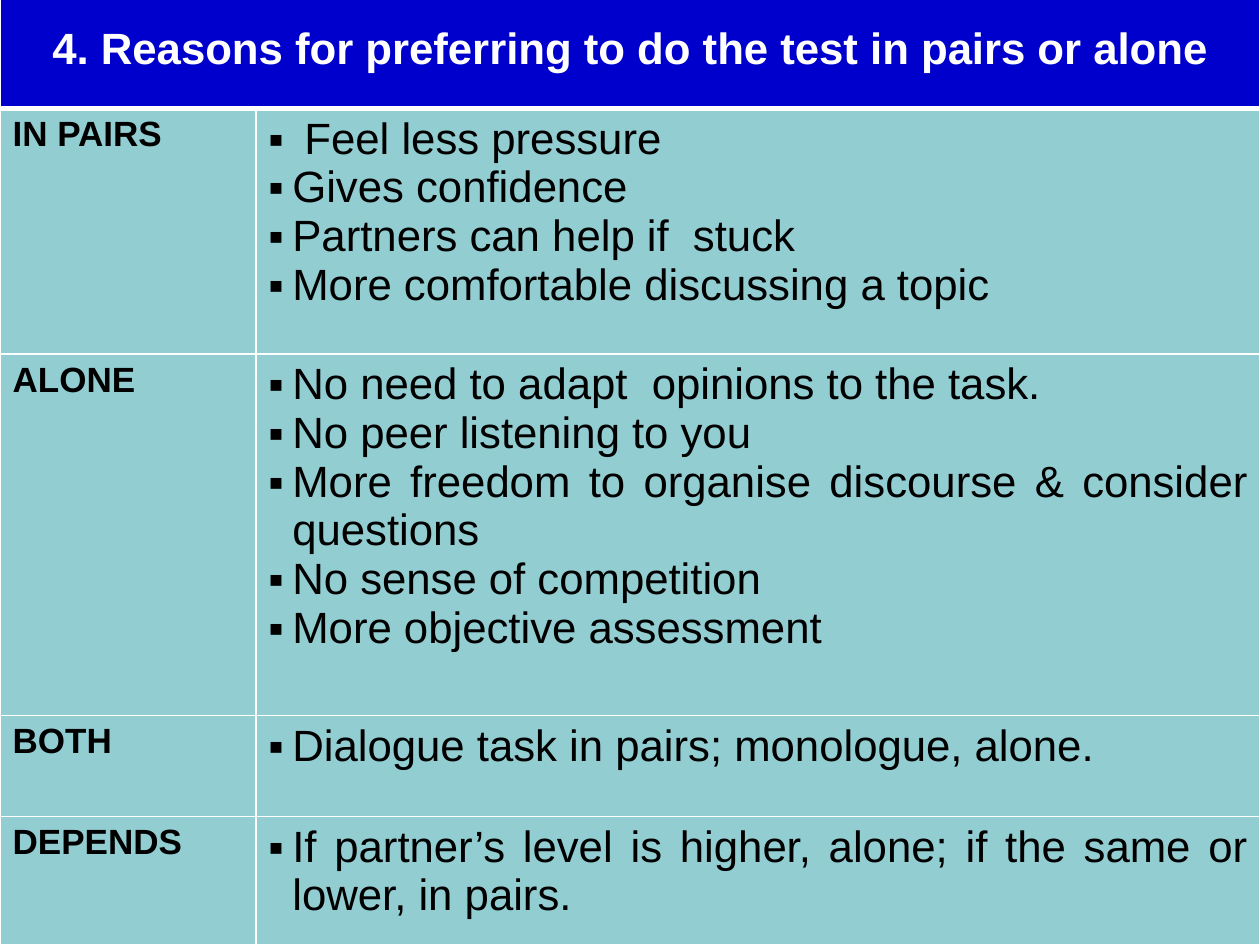
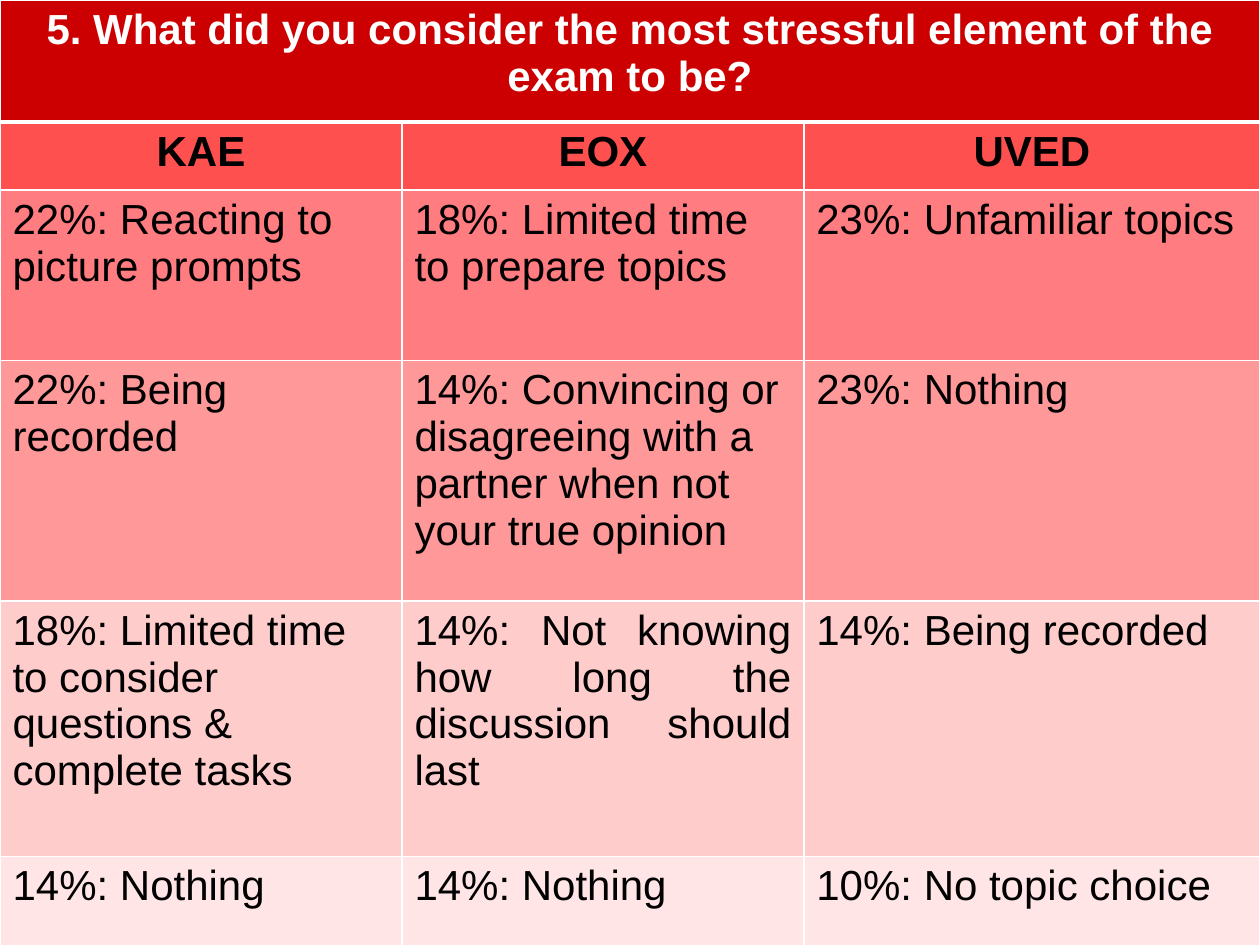
from dataclasses import dataclass

from lxml import etree
from pptx import Presentation
from pptx.dml.color import RGBColor
from pptx.enum.text import MSO_ANCHOR, PP_ALIGN
from pptx.oxml.ns import qn
from pptx.util import Emu, Pt

LEFT, MID, JUST = PP_ALIGN.LEFT, PP_ALIGN.CENTER, PP_ALIGN.JUSTIFY
TOP, CENTER = MSO_ANCHOR.TOP, MSO_ANCHOR.MIDDLE
PX = 9144  # 100 px to the inch
WIDE, HIGH = 1000, 750
INDENT = 19


@dataclass(frozen=True)
class Theme:
    font: str = "Arial"
    white: str = "FFFFFF"
    black: str = "000000"
    blue: str = "0000CC"
    teal: str = "92CDD2"
    red: str = "CC0000"
    coral: str = "FF5050"
    fades: tuple[str, ...] = ("FF7C80", "FF9999", "FFCCCC", "FFE5E5")
    label: int = 20
    body: int = 24
    large: int = 25
    thin: int = 1
    thick: int = 3


@dataclass(frozen=True)
class Style:
    fill: str
    color: str
    size: int
    bold: bool = False
    align: PP_ALIGN = LEFT
    bullet: bool = False
    before: int = 0
    anchor: MSO_ANCHOR = TOP


@dataclass(frozen=True)
class Item:
    lines: tuple[str, ...]
    style: Style


@dataclass(frozen=True)
class Grid:
    top: int
    cols: tuple[int, ...]
    rows: tuple[int, ...]
    title: Item
    items: list[list[Item]]


THEME = Theme()


def px(count: int) -> Emu:
    return Emu(count * PX)


# Cell parts
def add_edges(cell, top: int, bottom: int) -> None:
    props = cell._tc.get_or_add_tcPr()
    widths = {"lnL": THEME.thin, "lnR": THEME.thin, "lnT": top, "lnB": bottom}
    for tag, width in widths.items():
        line = etree.SubElement(props, qn(f"a:{tag}"), w=str(Pt(width)))
        fill = etree.SubElement(line, qn("a:solidFill"))
        etree.SubElement(fill, qn("a:srgbClr"), val=THEME.white)


def add_bullet(para) -> None:
    props = para._p.get_or_add_pPr()
    props.set("marL", str(px(INDENT)))
    props.set("indent", str(px(-INDENT)))
    etree.SubElement(props, qn("a:buFont"), typeface=THEME.font)
    etree.SubElement(props, qn("a:buChar"), char="▪")


def fill_cell(cell, item: Item) -> None:
    style = item.style
    cell.fill.solid()
    cell.fill.fore_color.rgb = RGBColor.from_string(style.fill)
    cell.vertical_anchor = style.anchor
    frame = cell.text_frame
    for index, line in enumerate(item.lines):
        para = frame.add_paragraph() if index else frame.paragraphs[0]
        para.text = line
        para.alignment = style.align
        if style.before:
            para.space_before = Pt(style.before)
        if style.bullet:
            add_bullet(para)
        font = para.font
        font.name, font.size, font.bold = THEME.font, Pt(style.size), style.bold
        font.color.rgb = RGBColor.from_string(style.color)


# One table fills each slide
def add_grid(deck, grid: Grid) -> None:
    slide = deck.slides.add_slide(deck.slide_layouts[6])
    frame = slide.shapes.add_table(
        len(grid.rows), len(grid.cols), 0, px(grid.top),
        px(sum(grid.cols)), px(sum(grid.rows)))
    table = frame.table
    table.first_row = table.horz_banding = False
    for col, width in zip(table.columns, grid.cols):
        col.width = px(width)
    for index, (row, height) in enumerate(zip(table.rows, grid.rows)):
        row.height = px(height)
        top = THEME.thick if index == 1 else THEME.thin
        bottom = THEME.thick if index == 0 else THEME.thin
        for cell in row.cells:
            add_edges(cell, top, bottom)
    head = table.cell(0, 0)
    head.merge(table.cell(0, len(grid.cols) - 1))
    fill_cell(head, grid.title)
    for row, items in enumerate(grid.items, 1):
        for col, item in enumerate(items):
            fill_cell(table.cell(row, col), item)


# Slide 1: reasons
def make_pairs() -> Grid:
    title = Style(THEME.blue, THEME.white, THEME.large, True, MID,
                  before=18, anchor=CENTER)
    label = Style(THEME.teal, THEME.black, THEME.label, True)
    points = Style(THEME.teal, THEME.black, THEME.large, align=JUST, bullet=True)
    reasons = {
        "IN PAIRS": (" Feel less pressure", "Gives confidence",
                     "Partners can help if  stuck",
                     "More comfortable discussing a topic"),
        "ALONE": ("No need to adapt  opinions to the task.",
                  "No peer listening to you",
                  "More freedom to organise discourse & consider questions",
                  "No sense of competition", "More objective assessment"),
        "BOTH": ("Dialogue task in pairs; monologue, alone.",),
        "DEPENDS": ("If partner’s level is higher, alone; "
                    "if the same or lower, in pairs.",),
    }
    return Grid(
        -8, (203, 797), (94, 195, 287, 80, 102),
        Item(("4. Reasons for preferring to do the test in pairs or alone",), title),
        [[Item((name,), label), Item(lines, points)]
         for name, lines in reasons.items()])


# Slide 2: stress
def make_stress() -> Grid:
    title = Style(THEME.red, THEME.white, THEME.body, True, MID)
    head = Style(THEME.coral, THEME.black, THEME.body, True, MID)
    exams = ("KAE", "EOX", "UVED")
    answers = (
        ("22%: Reacting to picture prompts",
         "18%: Limited time to prepare topics", "23%: Unfamiliar topics"),
        ("22%: Being recorded",
         "14%: Convincing or disagreeing with a partner when not your true opinion",
         "23%: Nothing"),
        ("18%: Limited time to consider questions & complete tasks",
         "14%: Not knowing how long the discussion should last",
         "14%: Being recorded"),
        ("14%: Nothing", "14%: Nothing", "10%: No topic choice"),
    )
    items = [[Item((name,), head) for name in exams]]
    for fade, texts in zip(THEME.fades, answers):
        items.append([
            Item((text,), Style(fade, THEME.black, THEME.body,
                                align=JUST if "how long" in text else LEFT))
            for text in texts])
    return Grid(
        0, (319, 319, 362), (97, 54, 135, 191, 203, 73),
        Item(("5. What did you consider the most stressful element "
              "of the exam to be?",), title), items)


def main() -> None:
    deck = Presentation()
    deck.slide_width, deck.slide_height = px(WIDE), px(HIGH)
    for grid in (make_pairs(), make_stress()):
        add_grid(deck, grid)
    deck.save("out.pptx")


if __name__ == "__main__":
    main()
